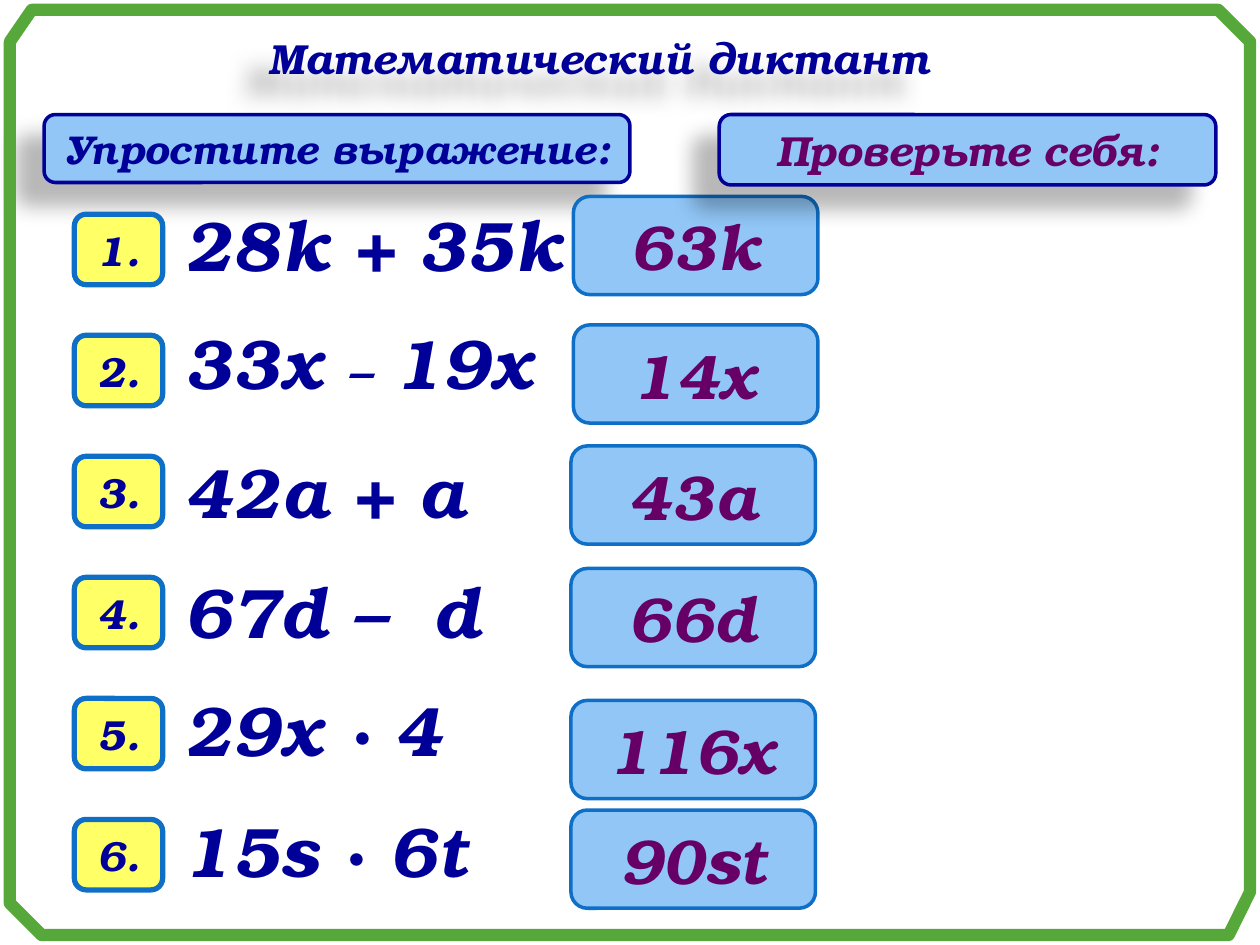
from lxml import etree
from pptx import Presentation
from pptx.dml.color import RGBColor
from pptx.enum.shapes import MSO_SHAPE
from pptx.enum.text import MSO_ANCHOR, MSO_AUTO_SIZE, PP_ALIGN
from pptx.oxml import parse_xml
from pptx.util import Cm, Pt

ROUNDED = MSO_SHAPE.ROUNDED_RECTANGLE
CENTER, LEFT = PP_ALIGN.CENTER, PP_ALIGN.LEFT
MIDDLE = MSO_ANCHOR.MIDDLE
NO_FIT = MSO_AUTO_SIZE.NONE
FONT = "TeX Gyre Bonum"
COLORS = {
    "navy": "000099", "purple": "660066", "sky": "91C6F7",
    "yellow": "FFFF66", "blue": "0F6FC6", "green": "55A839",
}
SHADOW = (
    '<a:effectLst xmlns:a="http://schemas.openxmlformats.org/drawingml/2006/main">'
    '<a:outerShdw blurRad="149860" dist="250190" dir="8460000" algn="ctr" rotWithShape="0">'
    '<a:srgbClr val="000000"><a:alpha val="28000"/></a:srgbClr>'
    '</a:outerShdw></a:effectLst>'
)


def write(sp, text, size, color, align=CENTER):
    tf = sp.text_frame
    tf.word_wrap = True
    tf.auto_size = NO_FIT
    p = tf.paragraphs[0]
    p.alignment = align
    for part in text.split("|"):
        r = p.add_run()
        r.text = part
        r.font.name = FONT
        r.font.size = Pt(size)
        r.font.bold = r.font.italic = True
        r.font.color.rgb = RGBColor.from_string(COLORS[color])
    return p


def add_box(shapes, place, fill, line, width, text, size, color):
    sp = shapes.add_shape(ROUNDED, *[Cm(v) for v in place])
    sp.shadow.inherit = False
    sp.fill.solid()
    sp.fill.fore_color.rgb = RGBColor.from_string(COLORS[fill])
    sp.line.color.rgb = RGBColor.from_string(COLORS[line])
    sp.line.width = Pt(width)
    write(sp, text, size, color)
    return sp


prs = Presentation()
prs.slide_width, prs.slide_height = Cm(25.4), Cm(19.05)
s = prs.slides.add_slide(prs.slide_layouts[5])

title = s.shapes.title
title.left, title.top, title.width, title.height = Cm(3.58), Cm(0.38), Cm(16.99), Cm(1.8)
write(title, "Математический диктант", 24, "navy")
title.text_frame.vertical_anchor = MIDDLE
title.text_frame.margin_bottom = Cm(0.38)
title.fill.background()
title.line.fill.background()

task = add_box(s.shapes, (0.89, 2.31, 11.81, 1.37), "sky", "navy", 2,
               "Упростите выражение:", 23, "navy")

expressions = [
    ("28k + 35k", 3.94), ("33x |–| 19x", 6.32), ("42a + a", 8.92),
    ("67d –  d", 11.33), ("29x · 4", 13.72), ("15s · 6t", 16.15),
]
for i, (text, top) in enumerate(expressions):
    group = s.shapes.add_group_shape()
    add_box(group.shapes, (1.5, 4.32 + 2.44 * i, 1.78, 1.42), "yellow", "blue", 3,
            f"{i + 1}.", 24, "navy")
    tb = group.shapes.add_textbox(Cm(3.48), Cm(top), Cm(8.43), Cm(1.96))
    p = write(tb, text, 40, "navy", LEFT)
    for r in p.runs:
        if r.text == "–":
            r.font.size = Pt(28)

answers = [
    ("63k", 11.56, 3.96), ("14x", 11.56, 6.55), ("43a", 11.51, 8.99),
    ("66d", 11.51, 11.46), ("116x", 11.51, 14.12), ("90st", 11.51, 16.33),
]
for text, left, top in answers:
    add_box(s.shapes, (left, top, 4.93, 1.98), "sky", "blue", 2, text, 36, "purple")

check = add_box(s.shapes, (14.5, 2.31, 10.01, 1.42), "sky", "navy", 2,
                "Проверьте себя:", 24, "purple")

for sp in (title, task, check):
    sp.shadow.inherit = False
    spPr = sp.element.spPr
    effects = spPr.find("{*}effectLst")
    spPr.replace(effects, parse_xml(SHADOW))

corners = [
    (0.2, 0.84), (0.2, 18.21), (0.84, 18.85), (24.77, 18.85),
    (25.2, 17.98), (25.2, 0.84), (24.56, 0.2), (0.64, 0.2),
]
points = [(Cm(x), Cm(y)) for x, y in corners]
builder = s.shapes.build_freeform(*points[0])
builder.add_line_segments(points[1:], close=True)
frame = builder.convert_to_shape()
frame.shadow.inherit = False
frame.fill.background()
frame.line.color.rgb = RGBColor.from_string(COLORS["green"])
frame.line.width = Pt(7)
etree.SubElement(frame.line._get_or_add_ln(),
                 "{http://schemas.openxmlformats.org/drawingml/2006/main}round")

prs.save("out.pptx")
